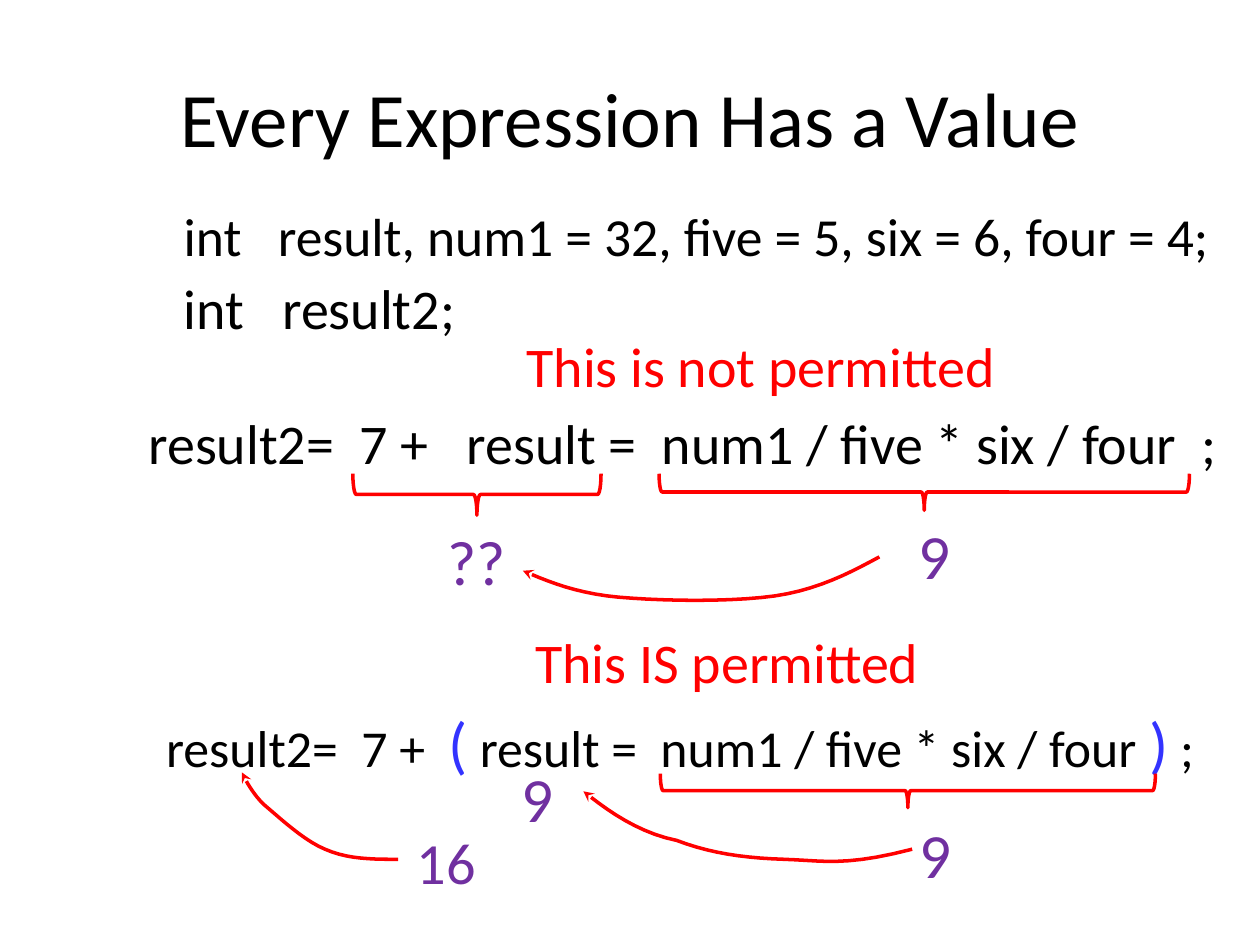
"""Build a slide on the value of nested assignment expressions."""
from dataclasses import dataclass

from lxml import etree
from pptx import Presentation
from pptx.dml.color import RGBColor
from pptx.enum import shapes, text
from pptx.oxml import ns
from pptx.util import Inches, Pt

BLACK = RGBColor(0x00, 0x00, 0x00)
RED = RGBColor(0xFF, 0x00, 0x00)
BLUE = RGBColor(0x33, 0x33, 0xFF)
PURPLE = RGBColor(0x70, 0x30, 0xA0)
FONT = "Calibri"
STEPS = 10


@dataclass
class Label:
    words: str
    box: tuple
    size: float = 32
    color: RGBColor = BLACK


@dataclass
class Brace:
    left: float
    top: float
    width: float
    height: float


@dataclass
class Arrow:
    start: tuple
    curves: list


LABELS = [
    Label("int   result, num1 = 32, five = 5, six = 6, four = 4;",
          (1.36, 1.56, 8.64, 0.69), 30.6),
    Label("int   result2;", (1.36, 2.12, 2.67, 0.6)),
    Label("This is not permitted", (4.08, 2.58, 4.25, 0.6), color=RED),
    Label("result2=  7 +   result =  num1 / five * six / four  ;",
          (1.08, 3.19, 8.83, 0.69)),
    Label("??", (3.45, 4.1, 0.69, 0.69), 36, PURPLE),
    Label("9", (7.19, 4.05, 0.58, 0.69), 36, PURPLE),
    Label("This IS permitted", (4.15, 4.93, 4.25, 0.6), color=RED),
    Label("9", (4.04, 5.98, 0.58, 0.69), 36, PURPLE),
    Label("9", (7.2, 6.42, 0.58, 0.69), 36, PURPLE),
    Label("16", (3.21, 6.51, 0.88, 0.61), 33.3, PURPLE),
]
NESTED = ["result2=  7 +  ", "(", " result =  num1 / five * six / four ",
          ")", " ;"]
BRACES = [
    Brace(3.62, 2.94, 0.33, 1.97),
    Brace(7.19, 1.8, 0.29, 4.21),
    Brace(7.07, 4.31, 0.27, 3.93),
]
ARROWS = [
    Arrow((6.98, 4.42), [
        ((6.74, 4.55), (6.49, 4.68), (6.15, 4.73)),
        ((5.8, 4.78), (5.25, 4.77), (4.91, 4.74)),
        ((4.58, 4.71), (4.36, 4.62), (4.15, 4.53))]),
    Arrow((7.24, 6.74), [
        ((6.7, 6.88), (6.53, 6.83), (6.22, 6.82)),
        ((5.9, 6.81), (5.63, 6.77), (5.37, 6.67)),
        ((5.07, 6.61), (4.83, 6.44), (4.63, 6.28))]),
    Arrow((3.16, 6.82), [
        ((2.96, 6.82), (2.76, 6.82), (2.58, 6.74)),
        ((2.41, 6.67), (2.22, 6.49), (2.1, 6.39)),
        ((1.99, 6.29), (1.92, 6.13), (1.92, 6.13))]),
]


def write(para, words: str, *, size: float = 32, color: RGBColor = BLACK):
    run = para.add_run()
    run.text = words
    run.font.name = FONT
    run.font.size = Pt(size)
    run.font.color.rgb = color


def frame(slide, box: tuple):
    area = slide.shapes.add_textbox(*map(Inches, box)).text_frame
    area.word_wrap = True
    return area.paragraphs[0]


def outline(shape):
    shape.shadow.inherit = False
    shape.fill.background()
    shape.line.color.rgb = RED
    shape.line.width = Pt(2)


def draw_brace(slide, brace: Brace):
    shape = slide.shapes.add_shape(
        shapes.MSO_SHAPE.RIGHT_BRACE, Inches(brace.left), Inches(brace.top),
        Inches(brace.width), Inches(brace.height))
    shape.rotation = 90
    outline(shape)


def bezier(knots: tuple, t: float) -> tuple:
    s = 1 - t
    parts = (s ** 3, 3 * s * s * t, 3 * s * t * t, t ** 3)
    return tuple(Inches(sum(w * k[axis] for w, k in zip(parts, knots)))
                 for axis in (0, 1))


def draw_arrow(slide, arrow: Arrow):
    last, points = arrow.start, []
    for curve in arrow.curves:
        knots = (last, *curve)
        points += [bezier(knots, n / STEPS) for n in range(1, STEPS + 1)]
        last = curve[-1]
    pen = slide.shapes.build_freeform(*map(Inches, arrow.start))
    pen.add_line_segments(points, close=False)
    shape = pen.convert_to_shape()
    outline(shape)
    line = shape.line.fill and shape._element.spPr.find(ns.qn("a:ln"))
    etree.SubElement(line, ns.qn("a:tailEnd"), type="stealth")


def main():
    deck = Presentation()
    deck.slide_width, deck.slide_height = Inches(10), Inches(7.5)
    slide = deck.slides.add_slide(deck.slide_layouts[5])

    title = slide.shapes.title
    title.left, title.top = Inches(0.5), Inches(0.3)
    title.width, title.height = Inches(9), Inches(1.25)
    title.text_frame.vertical_anchor = text.MSO_ANCHOR.MIDDLE
    head = title.text_frame.paragraphs[0]
    head.alignment = text.PP_ALIGN.CENTER
    write(head, "Every Expression Has a Value", size=44)

    for label in LABELS:
        write(frame(slide, label.box), label.words,
              size=label.size, color=label.color)
    para = frame(slide, (1.22, 5.54, 8.83, 0.69))
    for words in NESTED:
        mark = words in ("(", ")")
        write(para, words, size=36.1 if mark else 29.6,
              color=BLUE if mark else BLACK)
    for brace in BRACES:
        draw_brace(slide, brace)
    for arrow in ARROWS:
        draw_arrow(slide, arrow)
    deck.save("out.pptx")


if __name__ == "__main__":
    main()
